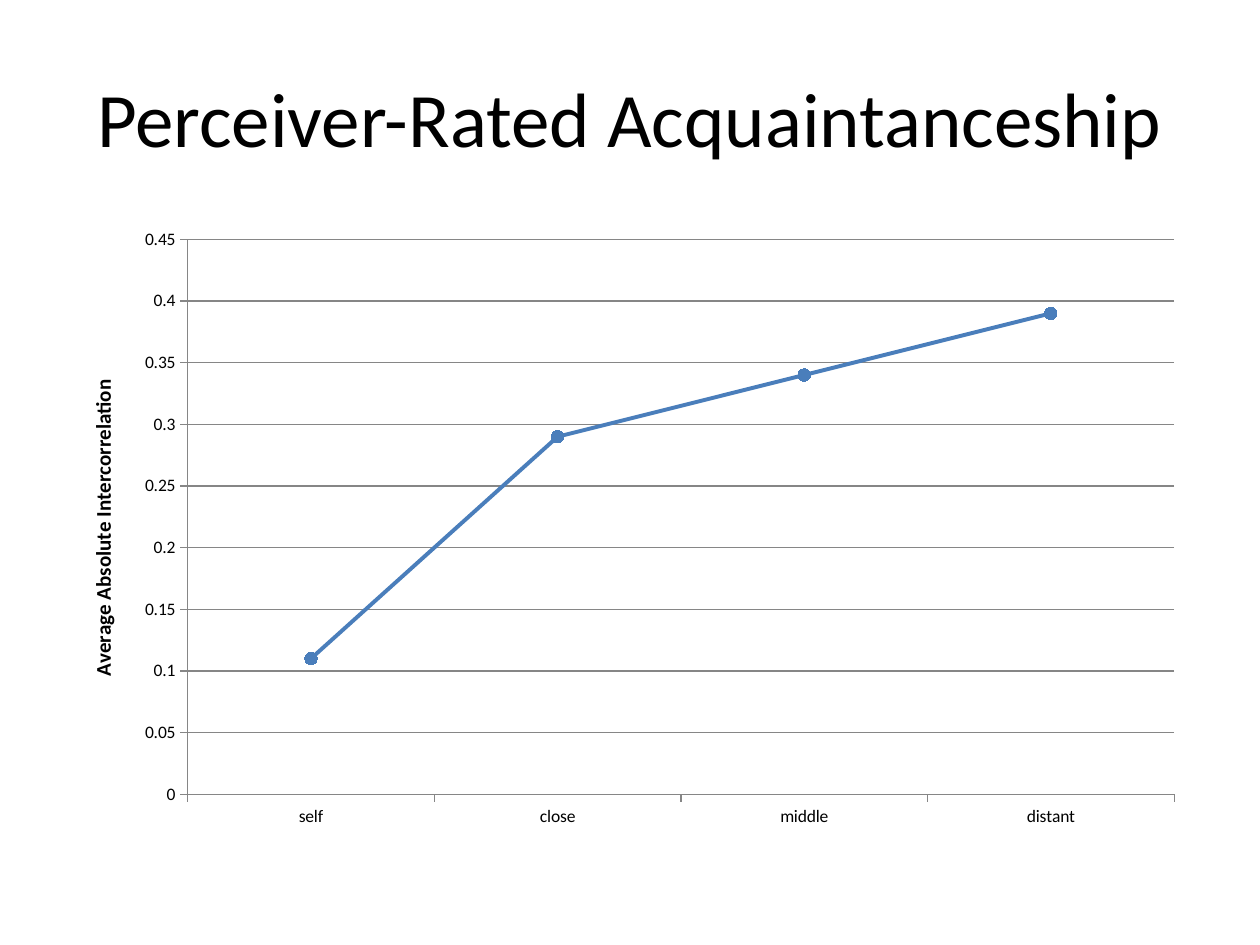
from dataclasses import dataclass

from lxml import etree
from pptx import Presentation
from pptx.chart import data as chart_data
from pptx.dml.color import RGBColor
from pptx.enum import chart as chart_enum, text
from pptx.oxml import ns
from pptx.util import Cm, Pt


@dataclass(frozen=True)
class Theme:
    font: str = "Calibri"
    ink: RGBColor = RGBColor(0x00, 0x00, 0x00)
    line: RGBColor = RGBColor(0x4A, 0x7E, 0xBB)
    marker: RGBColor = RGBColor(0x4F, 0x81, 0xBD)
    grid: RGBColor = RGBColor(0x86, 0x86, 0x86)
    title_size: int = 44
    axis_title_size: int = 12
    label_size: int = 10


THEME = Theme()
LEFT, WIDTH = Cm(1.27), Cm(22.86)


def style_font(font, size, bold=False):
    font.name = THEME.font
    font.size = Pt(size)
    font.bold = bold
    font.color.rgb = THEME.ink


def add_title(slide, wording):
    title = slide.shapes.title
    title.left, title.top, title.width, title.height = LEFT, Cm(0.76), WIDTH, Cm(3.18)
    frame = title.text_frame
    frame.vertical_anchor = text.MSO_ANCHOR.MIDDLE
    paragraph = frame.paragraphs[0]
    paragraph.alignment = text.PP_ALIGN.CENTER
    run = paragraph.add_run()
    run.text = wording
    style_font(run.font, THEME.title_size)


def place_plot(chart, **fractions):
    """Fix the inner plot area as fractions of the chart frame."""
    plot_area = chart.element.find(".//" + ns.qn("c:plotArea"))
    for old_layout in plot_area.findall(ns.qn("c:layout")):
        plot_area.remove(old_layout)
    layout = etree.Element(ns.qn("c:layout"))
    manual = etree.SubElement(layout, ns.qn("c:manualLayout"))
    settings = {"layoutTarget": "inner", "xMode": "edge", "yMode": "edge", **fractions}
    for name, value in settings.items():
        etree.SubElement(manual, ns.qn(f"c:{name}")).set("val", str(value))
    plot_area.insert(0, layout)


def style_axis(axis):
    axis.major_tick_mark = chart_enum.XL_TICK_MARK.OUTSIDE
    axis.minor_tick_mark = chart_enum.XL_TICK_MARK.NONE
    axis.format.line.color.rgb = THEME.grid
    axis.format.line.width = Pt(0.75)
    style_font(axis.tick_labels.font, THEME.label_size)


def style_value_axis(axis, wording):
    axis.minimum_scale, axis.maximum_scale, axis.major_unit = 0, 0.45, 0.05
    axis.tick_labels.number_format = "General"
    axis.tick_labels.number_format_is_linked = False
    axis.has_major_gridlines = True
    axis.major_gridlines.format.line.color.rgb = THEME.grid
    axis.major_gridlines.format.line.width = Pt(0.75)
    run = axis.axis_title.text_frame.paragraphs[0].add_run()
    run.text = wording
    style_font(run.font, THEME.axis_title_size, bold=True)


def style_series(series):
    series.smooth = False
    series.format.line.color.rgb = THEME.line
    series.format.line.width = Pt(2.25)
    marker = series.marker
    marker.style = chart_enum.XL_MARKER_STYLE.CIRCLE
    marker.size = 7
    marker.format.fill.solid()
    marker.format.fill.fore_color.rgb = THEME.marker
    marker.format.line.fill.background()


def add_line_chart(slide, points, value_title):
    values = chart_data.CategoryChartData()
    values.categories = list(points)
    values.add_series("Series 1", list(points.values()))
    chart = slide.shapes.add_chart(
        chart_enum.XL_CHART_TYPE.LINE_MARKERS, LEFT, Cm(4.45), WIDTH, Cm(12.57), values
    ).chart
    chart.has_title = False
    chart.has_legend = False
    chart.plots[0].vary_by_categories = False
    style_font(chart.font, THEME.label_size)
    for axis in (chart.category_axis, chart.value_axis):
        style_axis(axis)
    style_value_axis(chart.value_axis, value_title)
    style_series(chart.plots[0].series[0])
    place_plot(chart, x=0.11, y=0.03, w=0.87, h=0.89)


def main():
    presentation = Presentation()
    presentation.slide_width, presentation.slide_height = Cm(25.4), Cm(19.05)
    slide = presentation.slides.add_slide(presentation.slide_layouts[5])

    # Heading
    add_title(slide, "Perceiver-Rated Acquaintanceship")

    # Intercorrelation by closeness of acquaintance
    intercorrelations = {"self": 0.11, "close": 0.29, "middle": 0.34, "distant": 0.39}
    add_line_chart(slide, intercorrelations, "Average Absolute Intercorrelation")

    presentation.save("out.pptx")


if __name__ == "__main__":
    main()
